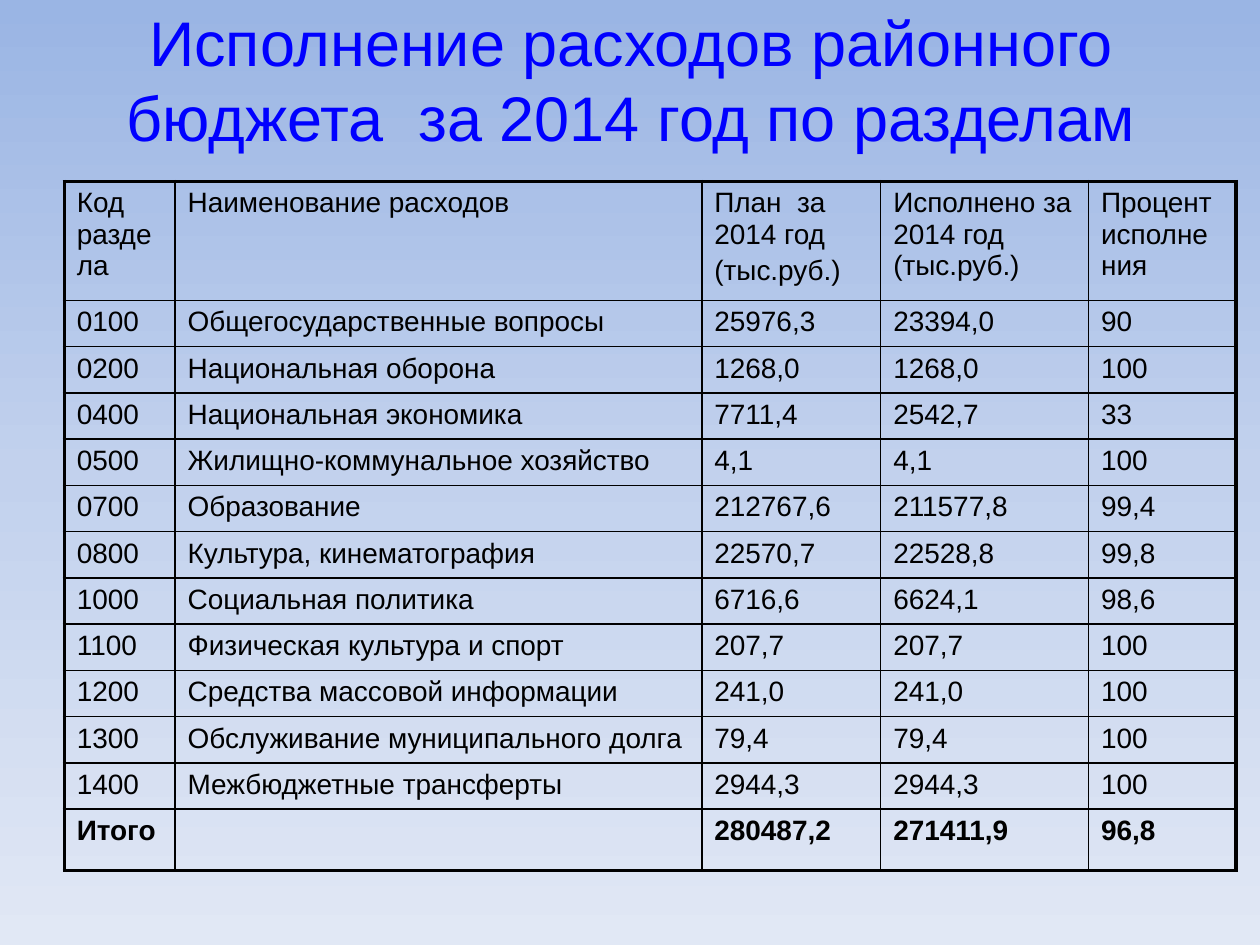
from copy import deepcopy

from lxml.etree import SubElement
from pptx import Presentation
from pptx.dml.color import RGBColor
from pptx.enum.text import MSO_ANCHOR, PP_ALIGN
from pptx.oxml.ns import qn
from pptx.util import Inches, Pt

BLUE = RGBColor(0x00, 0x00, 0xFF)
BLACK = RGBColor(0x00, 0x00, 0x00)
TOP = RGBColor(0x9A, 0xB5, 0xE4)
MID = RGBColor(0xC2, 0xD1, 0xED)
BASE = RGBColor(0xE1, 0xE8, 0xF5)
FONT = "Arial"
THIN, THICK = 1, 2.25

TITLE = "Исполнение расходов районного бюджета  за 2014 год по разделам"
WIDTHS = [0.88, 4.18, 1.42, 1.65, 1.17]
ROWS = [
    ("Код раздела", "Наименование расходов", "План  за 2014 год\n(тыс.руб.)",
     "Исполнено за 2014 год (тыс.руб.)", "Процент исполнения"),
    ("0100", "Общегосударственные вопросы", "25976,3", "23394,0", "90"),
    ("0200", "Национальная оборона", "1268,0", "1268,0", "100"),
    ("0400", "Национальная экономика", "7711,4", "2542,7", "33"),
    ("0500", "Жилищно-коммунальное хозяйство", "4,1", "4,1", "100"),
    ("0700", "Образование", "212767,6", "211577,8", "99,4"),
    ("0800", "Культура, кинематография", "22570,7", "22528,8", "99,8"),
    ("1000", "Социальная политика", "6716,6", "6624,1", "98,6"),
    ("1100", "Физическая культура и спорт", "207,7", "207,7", "100"),
    ("1200", "Средства массовой информации", "241,0", "241,0", "100"),
    ("1300", "Обслуживание муниципального долга", "79,4", "79,4", "100"),
    ("1400", "Межбюджетные трансферты", "2944,3", "2944,3", "100"),
    ("Итого", "", "280487,2", "271411,9", "96,8"),
]
HEIGHTS = [0.88] + [0.34] * (len(ROWS) - 2) + [0.49]


def add_run(para, text, size, color, bold=False):
    run = para.add_run()
    run.text = text
    run.font.name = FONT
    run.font.size = Pt(size)
    run.font.bold = bold
    run.font.color.rgb = color


def paint_back(slide):
    fill = slide.background.fill
    fill.gradient()
    fill.gradient_angle = 270
    stops = slide.background._cSld.find(".//" + qn("a:gsLst"))
    stops.insert(1, deepcopy(stops[0]))
    for stop, color, place in zip(fill.gradient_stops, (TOP, MID, BASE), (0, 0.5, 1)):
        stop.color.rgb = color
        stop.position = place


def add_title(slide):
    box = slide.shapes.add_textbox(Inches(0.51), Inches(0), Inches(9), Inches(1.25))
    frame = box.text_frame
    frame.word_wrap = True
    frame.vertical_anchor = MSO_ANCHOR.MIDDLE
    para = frame.paragraphs[0]
    para.alignment = PP_ALIGN.CENTER
    add_run(para, TITLE, 36, BLUE)


def set_edges(cell, edges):
    props = cell._tc.get_or_add_tcPr()
    for spot, (side, width) in enumerate(edges.items()):
        line = props.makeelement(qn("a:ln" + side), {"w": str(Pt(width))})
        fill = SubElement(line, qn("a:solidFill"))
        SubElement(fill, qn("a:srgbClr"), val=str(BLACK))
        props.insert(spot, line)


def fill_cell(cell, text, bold):
    cell.fill.background()
    frame = cell.text_frame
    for spot, part in enumerate(text.split("\n") if text else []):
        para = frame.add_paragraph() if spot else frame.paragraphs[0]
        if spot:
            para.space_before = Pt(3.2)
        add_run(para, part, 16, BLACK, bold)


def add_budget(slide):
    frame = slide.shapes.add_table(
        len(ROWS), len(WIDTHS), Inches(0.51), Inches(1.44),
        Inches(sum(WIDTHS)), Inches(sum(HEIGHTS)))
    table = frame.table
    table.first_row = table.horz_banding = False
    for col, width in zip(table.columns, WIDTHS):
        col.width = Inches(width)
    for row, height in zip(table.rows, HEIGHTS):
        row.height = Inches(height)
    end, last = len(ROWS) - 1, len(WIDTHS) - 1
    for i, row in enumerate(ROWS):
        for j, text in enumerate(row):
            cell = table.cell(i, j)
            fill_cell(cell, text, i == end)
            set_edges(cell, {
                "L": THICK if j == 0 else THIN,
                "R": THICK if j == last else THIN,
                "T": THICK if i == 0 else THIN,
                "B": THICK if i == end else THIN,
            })


def main():
    deck = Presentation()
    deck.slide_width = Inches(10)
    deck.slide_height = Inches(7.5)
    slide = deck.slides.add_slide(deck.slide_layouts[6])
    paint_back(slide)
    add_title(slide)
    add_budget(slide)
    deck.save("out.pptx")


if __name__ == "__main__":
    main()
